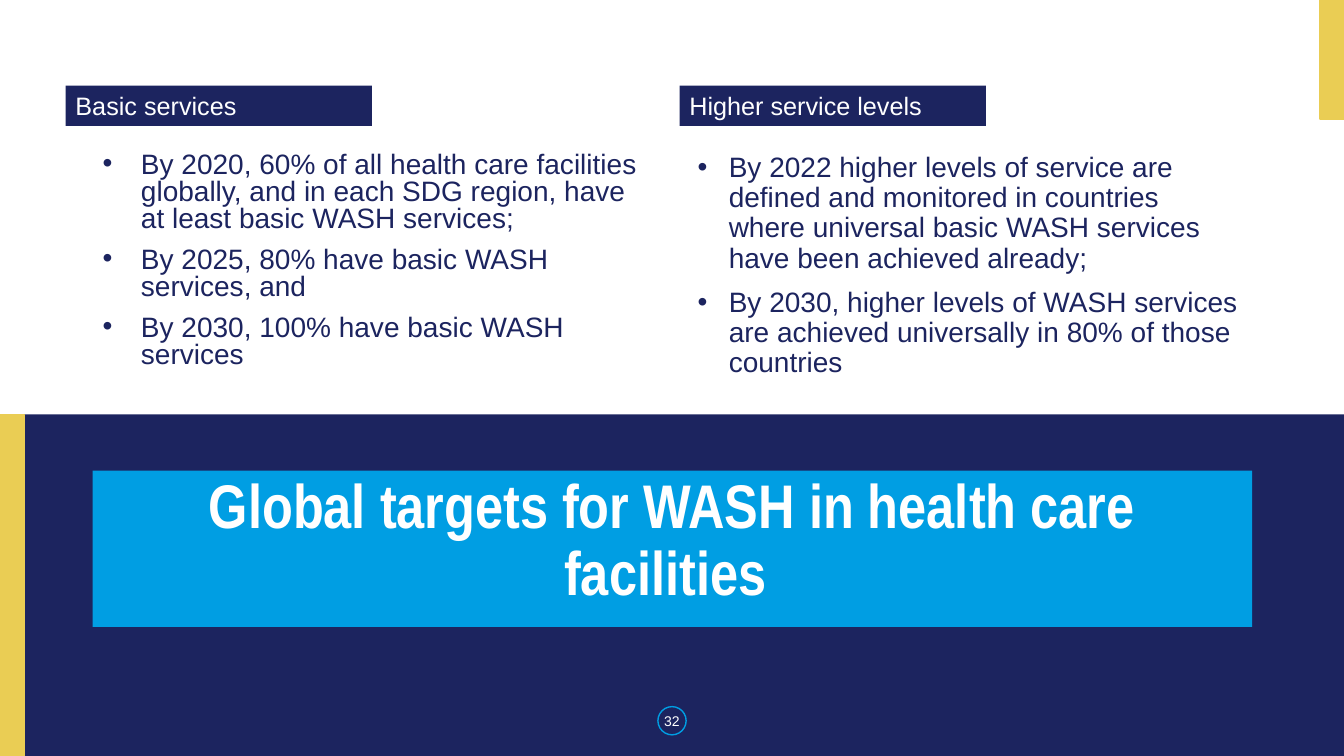
from dataclasses import dataclass

from lxml import etree
from pptx import Presentation
from pptx.dml.color import RGBColor
from pptx.enum.shapes import MSO_SHAPE
from pptx.enum.text import MSO_ANCHOR, PP_ALIGN
from pptx.oxml.ns import qn
from pptx.util import Inches, Pt

RECTANGLE, OVAL = MSO_SHAPE.RECTANGLE, MSO_SHAPE.OVAL
TOP, MIDDLE = MSO_ANCHOR.TOP, MSO_ANCHOR.MIDDLE
LEFT, CENTER = PP_ALIGN.LEFT, PP_ALIGN.CENTER


@dataclass(frozen=True)
class Theme:
    navy: str = "1C245F"
    gold: str = "EACD54"
    blue: str = "009EE3"
    white: str = "FFFFFF"
    font: str = "Arial"
    title_font: str = "Arial Narrow"
    title_size: int = 44
    body_size: int = 20
    label_size: int = 18
    number_size: int = 10
    line_width: int = 1
    bullet_gap: int = 10


class SlideBuilder:
    """Boxes are (left, top, width, height) in percent of the slide's size."""

    def __init__(self, presentation, theme):
        self.theme = theme
        self.width = presentation.slide_width
        self.height = presentation.slide_height
        self.slide = presentation.slides.add_slide(presentation.slide_layouts[6])

    def place(self, box):
        left, top, width, height = box
        return (round(left * self.width / 100), round(top * self.height / 100),
                round(width * self.width / 100), round(height * self.height / 100))

    def shape(self, box, fill=None, line=None, kind=RECTANGLE):
        shape = self.slide.shapes.add_shape(kind, *self.place(box))
        shape.shadow.inherit = False
        if fill:
            shape.fill.solid()
            shape.fill.fore_color.rgb = RGBColor.from_string(fill)
        else:
            shape.fill.background()
        if line:
            shape.line.color.rgb = RGBColor.from_string(line)
            shape.line.width = Pt(self.theme.line_width)
        else:
            shape.line.fill.background()
        return shape

    def text_box(self, box):
        return self.slide.shapes.add_textbox(*self.place(box))

    def set_text(self, shape, text, size, color=None, font=None, bold=False,
                 align=LEFT, anchor=TOP, spacing=1.0):
        frame = shape.text_frame
        frame.word_wrap = True
        frame.vertical_anchor = anchor
        frame.text = text
        for paragraph in frame.paragraphs:
            paragraph.alignment = align
            paragraph.line_spacing = spacing
            for run in paragraph.runs:
                run.font.name = font or self.theme.font
                run.font.size = Pt(size)
                run.font.bold = bold
                run.font.color.rgb = RGBColor.from_string(color or self.theme.white)
        return frame

    def label(self, box, text):
        shape = self.shape(box, self.theme.navy)
        self.set_text(shape, text, self.theme.label_size, anchor=MIDDLE)

    def bullets(self, box, items, indent, spacing):
        frame = self.set_text(self.text_box(box), "\n".join(items),
                              self.theme.body_size, self.theme.navy, spacing=spacing)
        for index, paragraph in enumerate(frame.paragraphs):
            if index:
                paragraph.space_before = Pt(self.theme.bullet_gap)
            properties = paragraph._p.get_or_add_pPr()
            properties.set("marL", str(Inches(indent)))
            properties.set("indent", str(-Inches(indent)))
            bullet_font = etree.SubElement(properties, qn("a:buFont"))
            bullet_font.set("typeface", self.theme.font)
            etree.SubElement(properties, qn("a:buChar")).set("char", "•")


def main():
    presentation = Presentation()
    presentation.slide_width, presentation.slide_height = Inches(13.33), Inches(7.5)
    theme = Theme()
    builder = SlideBuilder(presentation, theme)

    # Navy band and gold accents
    bar, band_top = 1.8, 54.8
    band_height = 100 - band_top
    builder.shape((bar, band_top, 100 - bar, band_height), theme.navy)
    for box in ((0, band_top, bar, band_height), (100 - bar, 0, bar, 15.73)):
        builder.shape(box, theme.gold, theme.gold)

    # Slide number
    builder.shape((48.95, 93.47, 2.1, 3.73), line=theme.blue, kind=OVAL)
    builder.set_text(builder.text_box((0, 92.67, 100, 5.33)), "32",
                     theme.number_size, align=CENTER, anchor=MIDDLE)

    # Title
    title = builder.shape((6.9, 62.27, 86.27, 20.67), theme.blue)
    builder.set_text(title, "Global targets for WASH in health care facilities ",
                     theme.title_size, font=theme.title_font, bold=True,
                     align=CENTER, spacing=0.9)

    # Target columns: label left, label, list left, list width, indent, spacing, items
    columns = (
        (4.88, "Basic services", 6.9, 41.63, 0.38, 0.8, (
            "By 2020, 60% of all health care facilities globally, and in each "
            "SDG region, have at least basic WASH services;",
            "By 2025, 80% have basic WASH services, and",
            "By 2030, 100% have basic WASH services")),
        (50.56, "Higher service levels", 51.16, 41.93, 0.31, 0.9, (
            "By 2022 higher levels of service are defined and monitored in countries "
            "where universal basic WASH services have been achieved already;",
            "By 2030, higher levels of WASH services are achieved universally "
            "in 80% of those countries")),
    )
    for label_left, label, list_left, list_width, indent, spacing, items in columns:
        builder.label((label_left, 11.33, 22.8, 5.33), label)
        builder.bullets((list_left, 19.6, list_width, 32.67), items, indent, spacing)

    presentation.save("out.pptx")


if __name__ == "__main__":
    main()
